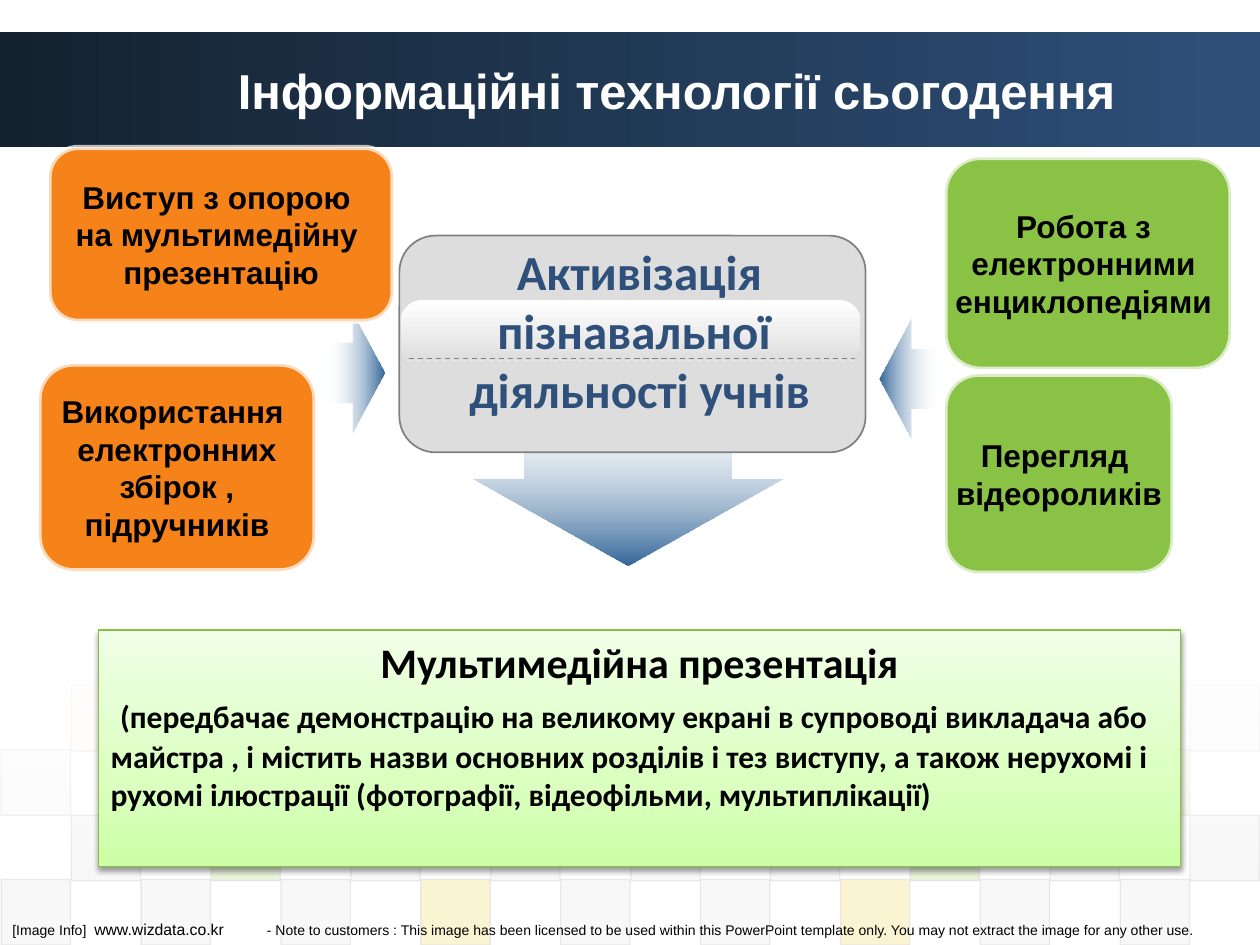
from lxml import etree
from pptx import Presentation
from pptx.dml.color import RGBColor
from pptx.enum.dml import MSO_LINE
from pptx.enum.shapes import MSO_CONNECTOR, MSO_SHAPE
from pptx.enum.text import MSO_ANCHOR, PP_ALIGN
from pptx.oxml.ns import qn
from pptx.util import Inches, Pt

COLORS = {
    "band_dark": "14222F", "navy": "2E507A", "steel": "336699", "orange": "F6831A",
    "green": "8AC246", "yellow": "EFC821", "gray": "DDDDDD", "light": "EAEAEA",
    "mid": "808080", "white": "FFFFFF", "black": "000000", "box_line": "87C141",
    "lime": "CBFFA5", "lime_mid": "DAFFBF", "lime_pale": "F0FFE7",
}
# Checkerboard rows: top, first column, opacity, colour of every second tile
TILE_KEYS = {"D": "gray", "E": "light", "G": "green", "Y": "yellow"}
TILE_ROWS = [(5.44, 1, 5, "YEEYDYEGE"), (5.95, 0, 10, "DDDDGDDDY"),
             (6.47, 1, 20, "DGDDDDGDD"), (6.98, 0, 20, "DDDYDDYDD")]
TILE_W, TILE_H, TILE_STEP = 0.55, 0.52, 0.555
ARROW_STOPS = [(0, "steel", 100), (100, "white", 0)]
HEADING = {"size": Pt(28), "name": "Calibri", "bold": True}
LABEL = {"size": Pt(18), "name": "Arial", "bold": True}
NOTE = {"size": Pt(8), "name": "Arial", "bold": False}


def rgb(key):
    return RGBColor.from_string(COLORS[key])


def add_color(parent, key, alpha):
    clr = etree.SubElement(parent, qn("a:srgbClr"), val=COLORS[key])
    etree.SubElement(clr, qn("a:alpha"), val=str(alpha * 1000))


def set_solid(fill, parent, key, alpha):
    fill.solid()
    fill.fore_color.rgb = rgb(key)
    clr = parent.find(qn("a:solidFill"))[0]
    etree.SubElement(clr, qn("a:alpha"), val=str(alpha * 1000))


def set_gradient(sp, stops, angle):
    """Fill with (position, colour, opacity) stops; the angle runs clockwise."""
    sp.fill.background()
    sp_pr = sp._element.spPr
    grad = etree.Element(qn("a:gradFill"), rotWithShape="1")
    gs_list = etree.SubElement(grad, qn("a:gsLst"))
    for pos, key, alpha in stops:
        add_color(etree.SubElement(gs_list, qn("a:gs"), pos=str(pos * 1000)), key, alpha)
    etree.SubElement(grad, qn("a:lin"), ang=str(angle * 60000), scaled="0")
    sp_pr.replace(sp_pr.find(qn("a:noFill")), grad)


def set_shadow(sp, key=None, alpha=100, blur=0, dist=0, angle=0):
    """Replace the theme shadow with the given one, or with none."""
    effects = etree.SubElement(sp._element.spPr, qn("a:effectLst"))
    if key:
        shadow = etree.SubElement(effects, qn("a:outerShdw"), blurRad=str(Pt(blur)),
                                  dist=str(Pt(dist)), dir=str(angle * 60000), rotWithShape="0")
        add_color(shadow, key, alpha)


def add_box(s, box, kind=MSO_SHAPE.RECTANGLE, fill=None, alpha=100, stops=None,
            angle=90, line=None, adj=(), shadow=()):
    """Line is (colour, width in points, opacity)."""
    sp = s.shapes.add_shape(kind, *map(Inches, box))
    for i, value in enumerate(adj):
        sp.adjustments[i] = value
    if stops:
        set_gradient(sp, stops, angle)
    else:
        set_solid(sp.fill, sp._element.spPr, fill, alpha)
    if line:
        key, width, line_alpha = line
        sp.line.width = Pt(width)
        set_solid(sp.line.fill, sp._element.spPr.find(qn("a:ln")), key, line_alpha)
    else:
        sp.line.fill.background()
    set_shadow(sp, *shadow)
    return sp


def add_run(p, text, fmt, color="black"):
    r = p.add_run()
    r.text = text
    for name, value in fmt.items():
        setattr(r.font, name, value)
    r.font.color.rgb = rgb(color)


def write_lines(tf, lines, fmt, color="black", anchor=MSO_ANCHOR.MIDDLE, wrap=True):
    tf.word_wrap = wrap
    tf.vertical_anchor = anchor
    for i, text in enumerate(lines):
        p = tf.add_paragraph() if i else tf.paragraphs[0]
        p.alignment = PP_ALIGN.CENTER
        add_run(p, text, fmt, color)


def add_card(s, box, fill, lines):
    sp = add_box(s, box, MSO_SHAPE.ROUNDED_RECTANGLE, fill, line=("white", 3, 70), adj=[0.167])
    write_lines(sp.text_frame, lines, LABEL, wrap=False)


def add_backdrop(s):
    add_box(s, (0, 0.25, 10, 0.92), angle=0, stops=[(0, "band_dark", 100), (100, "navy", 100)])
    for top, first, alpha, row in TILE_ROWS:
        for i, letter in enumerate(row):
            left = 0.01 + TILE_STEP * (first + 2 * i)
            add_box(s, (left, top, TILE_W, TILE_H), fill=TILE_KEYS[letter],
                    alpha=alpha, line=("gray", 0.75, 60))
    add_box(s, (0, 5.37, 10, 1.62), stops=[(0, "white", 90), (100, "white", 0)])


def place_title(s, text):
    title = s.shapes.title
    title.left, title.top, title.width, title.height = map(Inches, (1.33, 0.25, 8.08, 0.92))
    s.shapes._spTree.append(title._element)
    write_lines(title.text_frame, [text], {**HEADING, "name": "Arial"}, "white")


def add_arrows(s):
    down = add_box(s, (3.75, 3.06, 2.47, 1.43), MSO_SHAPE.UP_ARROW,
                   stops=ARROW_STOPS, adj=[0.666, 0.483])
    down._element.spPr.xfrm.set("flipV", "1")
    for left, top, rotation in [(2.34, 2.72, 90), (6.74, 2.77, 270)]:
        side = add_box(s, (left, top, 0.95, 0.47), MSO_SHAPE.UP_ARROW,
                       stops=ARROW_STOPS, adj=[0.5, 0.54])
        side.rotation = rotation


def add_center_panel(s):
    add_box(s, (3.17, 1.87, 3.7, 1.72), MSO_SHAPE.ROUNDED_RECTANGLE, "gray",
            line=("mid", 1, 100), adj=[0.167])
    add_box(s, (3.18, 2.38, 3.65, 0.5), MSO_SHAPE.ROUNDED_RECTANGLE,
            stops=[(0, "white", 100), (100, "gray", 100)], adj=[0.348])
    tf = s.shapes.add_textbox(*map(Inches, (3.12, 1.87, 3.91, 1.51))).text_frame
    write_lines(tf, ["Активізація пізнавальної ", "діяльності учнів"], HEADING, "navy", MSO_ANCHOR.TOP)
    rule = s.shapes.add_connector(MSO_CONNECTOR.STRAIGHT, *map(Inches, (3.23, 2.86, 6.77, 2.86)))
    rule.line.color.rgb = rgb("light")
    rule.line.width = Pt(0.75)
    rule.line.dash_style = MSO_LINE.DASH
    set_shadow(rule, "mid", 100, 0, 1.4, 315)


def add_license_note(s):
    tf = s.shapes.add_textbox(*map(Inches, (0, 7.25, 10, 0.25))).text_frame
    tf.word_wrap = True
    p = tf.paragraphs[0]
    tabs = etree.SubElement(p._p.get_or_add_pPr(), qn("a:tabLst"))
    for pos in (0.65, 2.02):
        etree.SubElement(tabs, qn("a:tab"), pos=str(Inches(pos)), algn="l")
    add_run(p, "[Image Info]\t", NOTE)
    add_run(p, "www.wizdata.co.kr", {**NOTE, "size": Pt(9)})
    add_run(p, "\t- Note to customers : This image has been licensed to be used within this "
               "PowerPoint template only. You may not extract the image for any other use.", NOTE)


def add_summary(s):
    sp = add_box(s, (0.78, 5, 8.59, 1.88), angle=270,
                 stops=[(0, "lime", 100), (35, "lime_mid", 100), (100, "lime_pale", 100)],
                 line=("box_line", 0.75, 100), shadow=("black", 38, 3.1, 1.6, 90))
    tf = sp.text_frame
    large = {**HEADING, "size": Pt(24)}
    write_lines(tf, ["Мультимедійна презентація"], large, anchor=MSO_ANCHOR.TOP)
    p = tf.add_paragraph()
    p.alignment = PP_ALIGN.LEFT
    add_run(p, " ", large)
    add_run(p, "(передбачає демонстрацію на великому екрані в супроводі викладача або майстра , "
               "і містить назви основних розділів і тез виступу, а також нерухомі і рухомі "
               "ілюстрації (фотографії, відеофільми, мультиплікації)", {**HEADING, "size": Pt(18)})


def main():
    prs = Presentation()
    prs.slide_width, prs.slide_height = Inches(10), Inches(7.5)
    s = prs.slides.add_slide(prs.slide_layouts[5])
    add_backdrop(s)
    add_arrows(s)
    place_title(s, "Інформаційні технології сьогодення")
    add_center_panel(s)
    add_card(s, (0.31, 2.89, 2.19, 1.64), "orange",
             ["Використання ", "електронних", " збірок , ", "підручників"])
    add_card(s, (0.39, 1.17, 2.73, 1.38), "orange",
             ["Виступ з опорою ", "на мультимедійну ", "презентацію"])
    add_card(s, (7.5, 2.97, 1.81, 1.58), "green", ["Перегляд ", "відеороликів"])
    add_card(s, (7.5, 1.25, 2.27, 1.68), "green", ["Робота з ", "електронними ", "енциклопедіями "])
    add_license_note(s)
    add_summary(s)
    prs.save("out.pptx")


if __name__ == "__main__":
    main()
